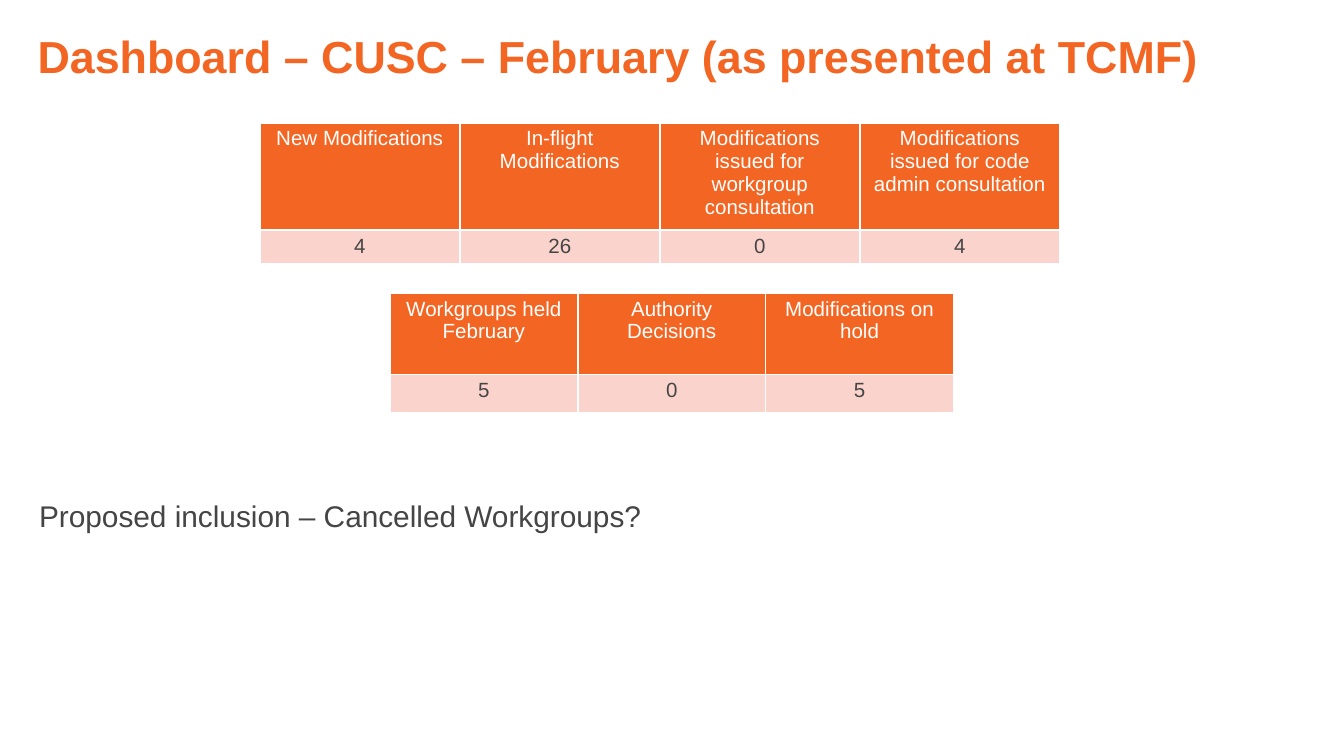
import pptx
import pptx.util
import pptx.dml.color
import pptx.enum.text
import pptx.oxml
import pptx.oxml.ns

Cm = pptx.util.Cm
ORANGE, PINK, GREY, WHITE = "F26522", "FAD3CD", "454545", "FFFFFF"


def color(value):
    return pptx.dml.color.RGBColor.from_string(value)


def style_text(paragraph, size, value, bold=False):
    for run in paragraph.runs:
        run.font.name = "Arial"
        run.font.size = pptx.util.Pt(size)
        run.font.bold = bold
        run.font.color.rgb = color(value)


deck = pptx.Presentation()
deck.slide_width, deck.slide_height = Cm(25.4), Cm(14.28)
slide = deck.slides.add_slide(deck.slide_layouts[6])

lines = [
    ("Dashboard – CUSC – February (as presented at TCMF)", 0.71, 0.74, 24.08, 1.5, 24, ORANGE, True, 0.8),
    ("Proposed inclusion – Cancelled Workgroups?", 0.74, 9.4, 22.71, 0.69, 16, GREY, False, 1.0),
]
for wording, left, top, width, height, size, value, bold, spacing in lines:
    frame = slide.shapes.add_textbox(Cm(left), Cm(top), Cm(width), Cm(height)).text_frame
    frame.word_wrap = True
    frame.margin_left = frame.margin_right = frame.margin_top = frame.margin_bottom = 0
    frame.text = wording
    frame.paragraphs[0].line_spacing = spacing
    style_text(frame.paragraphs[0], size, value, bold)

dashboards = [
    (4.91, 2.32, 3.78, (2.03, 0.61), [
        ("New Modifications", "4"),
        ("In-flight Modifications", "26"),
        ("Modifications issued for workgroup consultation", "0"),
        ("Modifications issued for code admin consultation", "4"),
    ]),
    (7.37, 5.54, 3.55, (1.53, 0.73), [
        ("Workgroups held February", "5"),
        ("Authority Decisions", "0"),
        ("Modifications on hold", "5"),
    ]),
]
for left, top, column_width, row_heights, measures in dashboards:
    table = slide.shapes.add_table(
        2, len(measures), Cm(left), Cm(top),
        Cm(column_width * len(measures)), Cm(sum(row_heights))).table
    for row, height in zip(table.rows, row_heights):
        row.height = Cm(height)
    for column, measure in enumerate(measures):
        table.columns[column].width = Cm(column_width)
        for row, wording in enumerate(measure):
            cell = table.cell(row, column)
            cell.margin_left = cell.margin_right = Cm(0.18)
            cell.margin_top = cell.margin_bottom = Cm(0.08)
            cell.fill.solid()
            cell.fill.fore_color.rgb = color(PINK if row else ORANGE)
            cell.text_frame.text = wording
            paragraph = cell.text_frame.paragraphs[0]
            paragraph.alignment = pptx.enum.text.PP_ALIGN.CENTER
            style_text(paragraph, 11, GREY if row else WHITE)
            if row:
                properties = cell._tc.get_or_add_tcPr()
                for position, side in enumerate("LRTB"):
                    properties.insert(position, pptx.oxml.parse_xml(
                        f'<a:ln{side} {pptx.oxml.ns.nsdecls("a")} w="12700"><a:solidFill>'
                        f'<a:srgbClr val="{WHITE}"/></a:solidFill></a:ln{side}>'))

deck.save("out.pptx")
